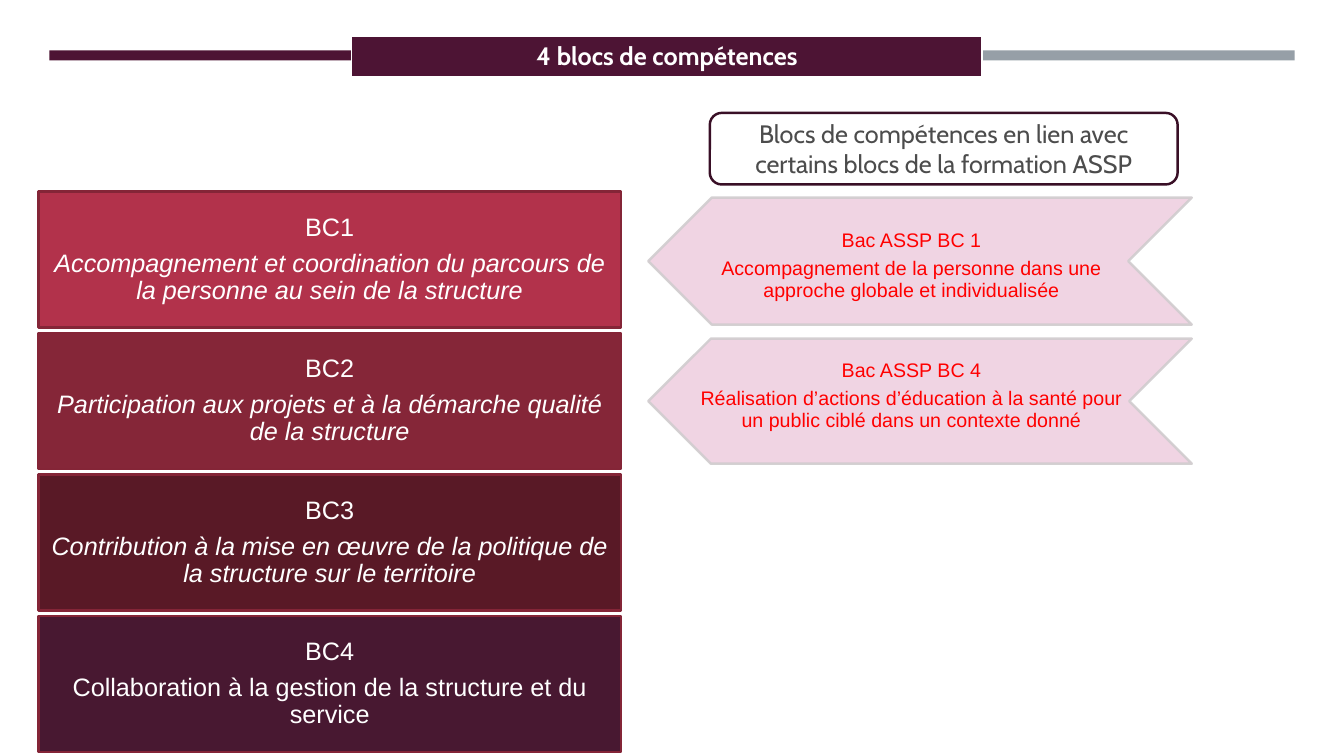
from lxml.etree import SubElement
from pptx import Presentation
from pptx.dml.color import RGBColor
from pptx.enum.shapes import MSO_SHAPE as SHAPE
from pptx.enum.text import MSO_ANCHOR as ANCHOR, PP_ALIGN as ALIGN
from pptx.oxml.ns import qn
from pptx.util import Inches, Pt

WHITE = RGBColor(0xFF, 0xFF, 0xFF)
BLACK = RGBColor(0x00, 0x00, 0x00)
RED = RGBColor(0xFF, 0x00, 0x00)
PLUM = RGBColor(0x4D, 0x14, 0x34)
DARK_PLUM = RGBColor(0x39, 0x0F, 0x26)
MAUVE = RGBColor(0x90, 0x31, 0x63)
GREY = RGBColor(0x96, 0x9F, 0xA7)
PINK = RGBColor(0xEF, 0xD0, 0xE0)
PALE_GREY = RGBColor(0xD0, 0xCC, 0xCE)
WINE = RGBColor(0x84, 0x25, 0x37)

TITLE = "4 blocs de compétences"
LINK_NOTE = "Blocs de compétences en lien avec certains blocs de la formation ASSP"
BARS = [(0.49, PLUM), (4.64, MAUVE), (8.79, GREY)]
BLOCKS = [
    ("BC1", "Accompagnement et coordination du parcours de la personne au sein de la structure",
     True, RGBColor(0xB2, 0x32, 0x4B)),
    ("BC2", "Participation aux projets et à la démarche qualité de la structure",
     True, RGBColor(0x85, 0x26, 0x38)),
    ("BC3", "Contribution à la mise en œuvre de la politique de la structure sur le territoire",
     True, RGBColor(0x59, 0x19, 0x26)),
    ("BC4", "Collaboration à la gestion de la structure et du service",
     False, RGBColor(0x48, 0x18, 0x31)),
]
LINKS = [
    ("Bac ASSP BC 1", "Accompagnement de la personne dans une approche globale et individualisée",
     1.96, 2.01, 1.26),
    ("Bac ASSP BC 4", "Réalisation d’actions d’éducation à la santé pour un public ciblé dans un contexte donné",
     3.36, 3.31, 1.24),
]
BLOCK_TOP, BLOCK_STEP = 1.9, 1.404
BORDERS = [("lnL", 1), ("lnR", 1), ("lnT", 1), ("lnB", 3)]

BLOCK_FONT = {"name": "Arial", "size": Pt(18)}
LINK_FONT = {"name": "Arial", "size": Pt(14)}
CABIN_FONT = {"name": "Cabin", "size": Pt(18)}
LINK_FRAME = {"margin_left": Inches(0.02), "margin_top": Inches(0.01),
              "margin_right": 0, "margin_bottom": Inches(0.01)}


def set_all(obj, values):
    for key, value in values.items():
        setattr(obj, key, value)


def fade(element, percent):
    for color in element.iter(qn("a:srgbClr")):
        SubElement(color, qn("a:alpha")).set("val", str(percent * 1000))


def add_box(kind, box, fill=None, line=None):
    sp = s.shapes.add_shape(kind, *map(Inches, box))
    sp.shadow.inherit = False
    if fill is None:
        sp.fill.background()
    else:
        sp.fill.solid()
        sp.fill.fore_color.rgb = fill
    if line is None:
        sp.line.fill.background()
    else:
        sp.line.color.rgb = line
        sp.line.width = Pt(1.75)
    return sp


def add_line(p, text, font, color):
    p.alignment = ALIGN.CENTER
    r = p.add_run()
    r.text = text
    set_all(r.font, font)
    r.font.color.rgb = color
    return r


def add_pair(tf, code, name, font, color, italic=False):
    set_all(tf, {"word_wrap": True, "vertical_anchor": ANCHOR.MIDDLE})
    for p, text, slant in [(tf.paragraphs[0], code, False), (tf.add_paragraph(), name, italic)]:
        set_all(p, {"line_spacing": 0.9, "space_after": Pt(font["size"].pt * 0.35)})
        add_line(p, text, {**font, "italic": slant}, color)


prs = Presentation()
prs.slide_width, prs.slide_height = Inches(13.33), Inches(7.5)
s = prs.slides.add_slide(prs.slide_layouts[6])

for left, color in BARS:
    add_box(SHAPE.RECTANGLE, (left, 0.5, 4.05, 0.1), color)

note = add_box(SHAPE.ROUNDED_RECTANGLE, (7.04, 1.12, 4.64, 0.71), line=DARK_PLUM)
set_all(note.text_frame, {"word_wrap": True, "vertical_anchor": ANCHOR.MIDDLE})
r = add_line(note.text_frame.paragraphs[0], LINK_NOTE, CABIN_FONT, BLACK)
fade(r._r, 70)

for code, name, arrow_top, text_top, height in LINKS:
    arrow = add_box(SHAPE.CHEVRON, (6.43, arrow_top, 5.39, height), PINK, PALE_GREY)
    arrow.rotation = 180
    fade(arrow._element.spPr, 90)
    label = s.shapes.add_textbox(*map(Inches, (6.82, text_top, 4.42, height)))
    set_all(label.text_frame, LINK_FRAME)
    add_pair(label.text_frame, code, name, LINK_FONT, RED)

table = s.shapes.add_table(1, 1, *map(Inches, (3.49, 0.36, 6.25, 0.41))).table
cell = table.cell(0, 0)
tcPr = cell._tc.get_or_add_tcPr()
for side, width in BORDERS:
    ln = SubElement(tcPr, qn(f"a:{side}"), w=str(Pt(width)))
    SubElement(SubElement(ln, qn("a:solidFill")), qn("a:srgbClr"), val=str(WHITE))
cell.fill.solid()
cell.fill.fore_color.rgb = PLUM
add_line(cell.text_frame.paragraphs[0], TITLE, {**CABIN_FONT, "bold": True}, WHITE)

for i, (code, name, italic, color) in enumerate(BLOCKS):
    block = add_box(SHAPE.RECTANGLE, (0.38, BLOCK_TOP + i * BLOCK_STEP, 5.78, 1.35), color, WINE)
    add_pair(block.text_frame, code, name, BLOCK_FONT, WHITE, italic)

prs.save("out.pptx")
